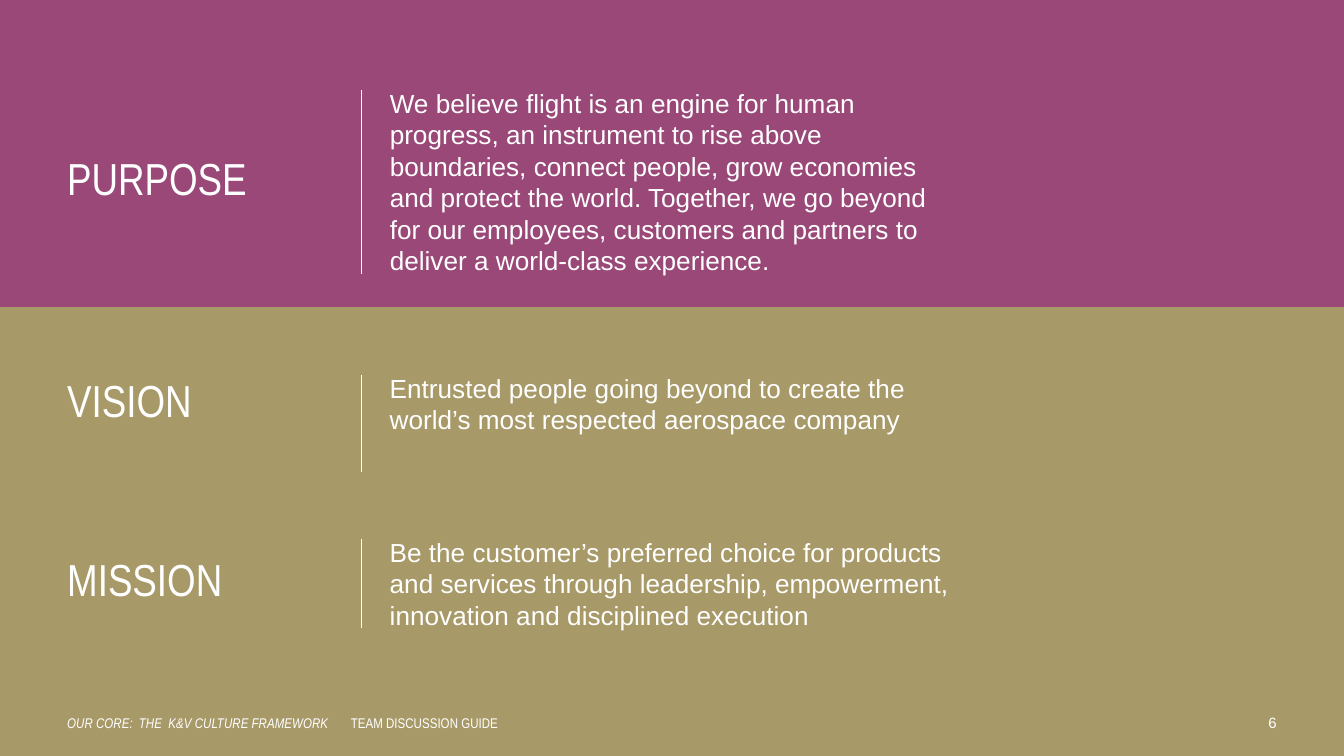
from dataclasses import dataclass

from lxml import etree
from pptx import Presentation
from pptx.dml.color import RGBColor
from pptx.enum import shapes, text
from pptx.oxml import ns
from pptx.util import Inches, Pt

COLORS = {"purple": "994878", "sand": "A89968", "white": "FFFFFF"}
HEADING_FONT, BODY_FONT = "Arial Narrow", "Arial"
PAGE_WIDTH = 10
PAGE_HEIGHT = PAGE_WIDTH * 9 / 16
PANEL_HEIGHT = 3.34
MARGIN, RULE_X, BODY_X = 0.5, 2.69, 2.9
FOOTER_TOP, FOOTER_HEIGHT = 5.3, 0.2


@dataclass
class Statement:
    heading: str
    body: str
    top: float
    heading_height: float
    body_width: float
    body_height: float
    rule_bottom: float


STATEMENTS = [
    Statement("PURPOSE",
              "We believe flight is an engine for human progress, an instrument to "
              "rise above boundaries, connect people, grow economies and protect the "
              "world. Together, we go beyond for our employees, customers and "
              "partners to deliver a world-class experience.",
              0.65, 1.39, 4.21, 1.69, 2.04),
    Statement("VISION",
              "Entrusted people going beyond to create the world’s most respected "
              "aerospace company",
              2.77, 0.45, 4.46, 0.65, 3.51),
    Statement("MISSION",
              "Be the customer’s preferred choice for products and services through "
              "leadership, empowerment, innovation and disciplined execution",
              3.99, 0.68, 4.46, 0.82, 4.67),
]


def color(name: str) -> RGBColor:
    return RGBColor.from_string(COLORS[name])


def place(box, left: float, top: float, width: float, height: float,
          anchor=text.MSO_ANCHOR.TOP, inset_top: float = 0):
    """Position a text shape, set its frame and return its first paragraph."""
    box.left, box.top = Inches(left), Inches(top)
    box.width, box.height = Inches(width), Inches(height)
    frame = box.text_frame
    frame.word_wrap = True
    frame.auto_size = text.MSO_AUTO_SIZE.NONE
    frame.vertical_anchor = anchor
    frame.margin_left = frame.margin_right = frame.margin_bottom = 0
    frame.margin_top = Inches(inset_top)
    para = frame.paragraphs[0]
    para.alignment = text.PP_ALIGN.LEFT
    return para


def add_span(para, words: str, size: float, font: str, italic: bool = False) -> None:
    span = para.add_run()
    span.text = words
    span.font.size = Pt(size)
    span.font.name = font
    span.font.italic = italic
    span.font.color.rgb = color("white")


def new_box(page):
    return page.shapes.add_textbox(0, 0, 0, 0)


def draw_statement(page, item: Statement, heading_box, body_box) -> None:
    # Body text, without the bullet a body placeholder brings
    para = place(body_box, BODY_X, item.top, item.body_width, item.body_height)
    props = para._p.get_or_add_pPr()
    props.set("marL", "0")
    props.set("indent", "0")
    etree.SubElement(props, ns.qn("a:buNone"))
    para.space_before, para.space_after = Pt(0), Pt(8)
    add_span(para, item.body, 14, BODY_FONT)

    # Heading
    para = place(heading_box, MARGIN, item.top, RULE_X - MARGIN,
                 item.heading_height, text.MSO_ANCHOR.MIDDLE)
    para.line_spacing = 0.9
    add_span(para, item.heading, 24, HEADING_FONT)

    # Divider
    rule = page.shapes.add_connector(
        shapes.MSO_CONNECTOR.STRAIGHT, Inches(RULE_X), Inches(item.top + 0.02),
        Inches(RULE_X), Inches(item.rule_bottom))
    rule.line.color.rgb = color("white")
    rule.line.width = Pt(1)
    etree.SubElement(rule._element.spPr, ns.qn("a:effectLst"))


def draw_footer(page) -> None:
    para = place(new_box(page), MARGIN, FOOTER_TOP, 4.35, FOOTER_HEIGHT, inset_top=0.02)
    tabs = etree.SubElement(para._p.get_or_add_pPr(), ns.qn("a:tabLst"))
    etree.SubElement(tabs, ns.qn("a:tab"), pos=str(Inches(2.11)), algn="l")
    add_span(para, "OUR CORE:  THE  K&V CULTURE FRAMEWORK\t", 7.5, HEADING_FONT, italic=True)
    add_span(para, "TEAM DISCUSSION GUIDE", 7.5, HEADING_FONT)

    para = place(new_box(page), 9, FOOTER_TOP, 0.5, FOOTER_HEIGHT, inset_top=0.01)
    para.alignment = text.PP_ALIGN.RIGHT
    add_span(para, "6", 8, BODY_FONT)


def main() -> None:
    deck = Presentation()
    deck.slide_width, deck.slide_height = Inches(PAGE_WIDTH), Inches(PAGE_HEIGHT)
    page = deck.slides.add_slide(deck.slide_layouts[1])
    title, body = page.shapes.title, page.placeholders[1]

    # Two-colour backdrop
    page.background.fill.solid()
    page.background.fill.fore_color.rgb = color("purple")
    panel = page.shapes.add_shape(
        shapes.MSO_SHAPE.RECTANGLE, 0, Inches(PAGE_HEIGHT - PANEL_HEIGHT),
        Inches(PAGE_WIDTH), Inches(PANEL_HEIGHT))
    panel.shadow.inherit = False
    panel.fill.solid()
    panel.fill.fore_color.rgb = color("sand")
    panel.line.fill.background()
    page.shapes._spTree.insert(2, panel._element)

    # Statements: the first one fills the placeholders
    first, *others = STATEMENTS
    draw_statement(page, first, title, body)
    for item in others:
        draw_statement(page, item, new_box(page), new_box(page))

    draw_footer(page)
    deck.save("out.pptx")


if __name__ == "__main__":
    main()
